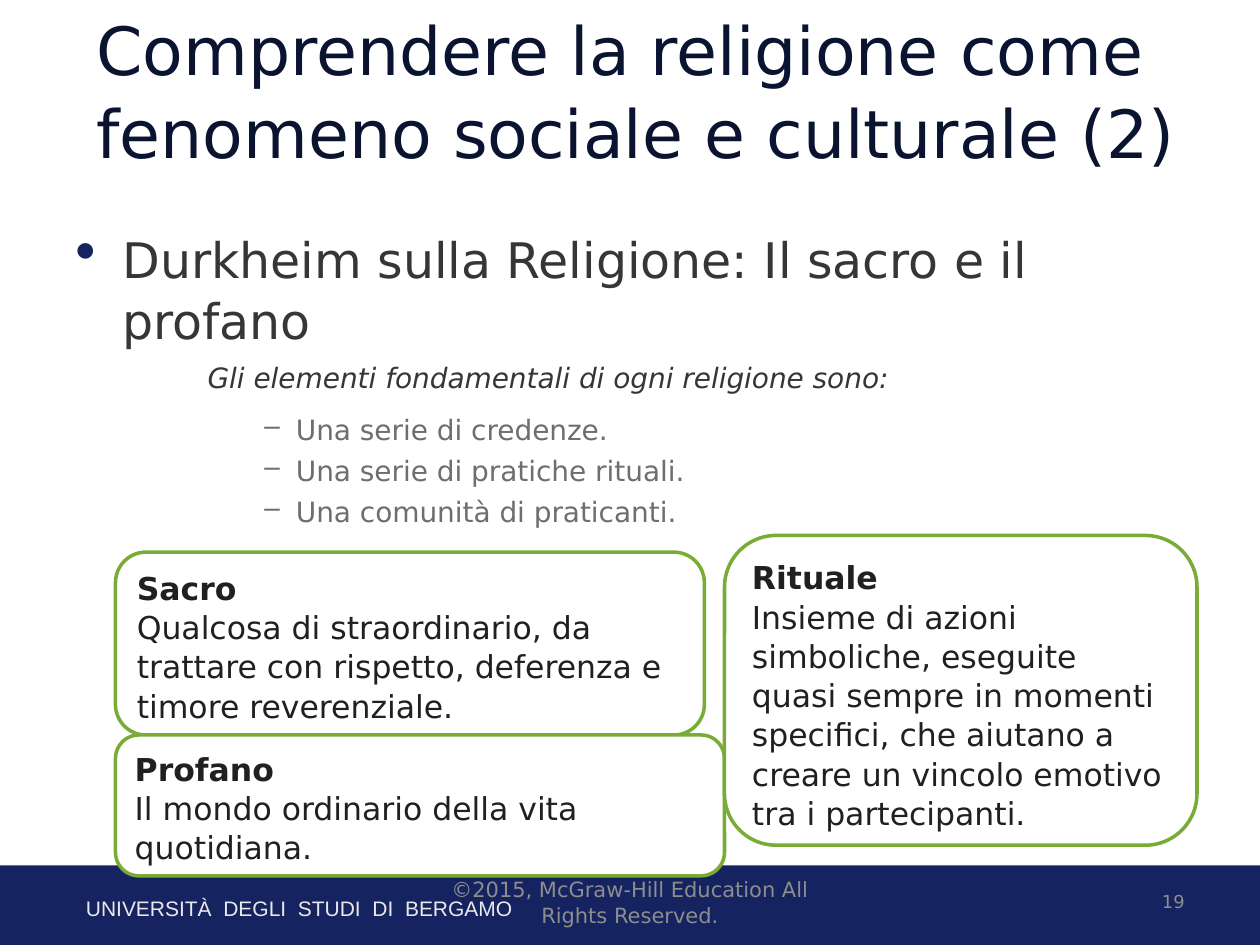
import pptx
import pptx.util
import pptx.dml.color
import pptx.enum.shapes
import pptx.enum.text
import pptx.oxml
import pptx.oxml.ns

Pt = pptx.util.Pt
RGBColor = pptx.dml.color.RGBColor
ALIGN = pptx.enum.text.PP_ALIGN
ANCHOR = pptx.enum.text.MSO_ANCHOR
SHAPE = pptx.enum.shapes.MSO_SHAPE

WHITE = RGBColor(0xFF, 0xFF, 0xFF)
NAVY = RGBColor(0x15, 0x24, 0x60)
TITLE_COLOR = RGBColor(0x0A, 0x14, 0x31)
BODY_COLOR = RGBColor(0x36, 0x36, 0x36)
ITEM_COLOR = RGBColor(0x6E, 0x6E, 0x6E)
BOX_TEXT = RGBColor(0x20, 0x20, 0x20)
GREEN = RGBColor(0x78, 0xAC, 0x35)
FOOTER_COLOR = RGBColor(0x8D, 0x8D, 0x8D)
PALE = RGBColor(0xE9, 0xE9, 0xE9)
FONT = "DejaVu Sans"
LINE_SPACING = 1.04

TITLE = "Comprendere la religione come fenomeno sociale e culturale (2)"
HEADING = "Durkheim sulla Religione: Il sacro e il profano"
INTRODUCTION = "Gli elementi fondamentali di ogni religione sono:"
ELEMENTS = [
    "Una serie di credenze.",
    "Una serie di pratiche rituali.",
    "Una comunità di praticanti.",
]
DEFINITIONS = [
    ("Sacro", "Qualcosa di straordinario, da trattare con rispetto, deferenza e timore reverenziale.",
     (66, 315.5, 336.5, 104.5)),
    ("Profano", "Il mondo ordinario della vita quotidiana.", (66, 420, 348, 80.5)),
    ("Rituale", "Insieme di azioni simboliche, eseguite quasi sempre in momenti specifici, "
     "che aiutano a creare un vincolo emotivo tra i partecipanti.", (414, 306, 270, 177)),
]
UNIVERSITY = "UNIVERSITÀ  DEGLI  STUDI  DI  BERGAMO"
COPYRIGHT = "©2015, McGraw-Hill Education All Rights Reserved."
PAGE_NUMBER = "19"


def write(paragraph, text, size, color, font=FONT, bold=False, italic=False, align=ALIGN.LEFT):
    paragraph.text = text
    paragraph.alignment = align
    paragraph.line_spacing = LINE_SPACING
    for run in paragraph.runs:
        run.font.name = font
        run.font.size = Pt(size)
        run.font.bold = bold
        run.font.italic = italic
        run.font.color.rgb = color


def add_text_box(slide, place, anchor=ANCHOR.TOP):
    frame = slide.shapes.add_textbox(*map(Pt, place)).text_frame
    frame.word_wrap = True
    frame.vertical_anchor = anchor
    return frame


def add_panel(slide, kind, place, fill):
    shape = slide.shapes.add_shape(kind, *map(Pt, place))
    shape.shadow.inherit = False
    shape.fill.solid()
    shape.fill.fore_color.rgb = fill
    return shape


def indent(paragraph, level, margin, hanging=0, bullet=None, color=None, percent=100):
    paragraph.level = level
    properties = paragraph._p.get_or_add_pPr()
    properties.set("marL", str(Pt(margin)))
    properties.set("indent", str(Pt(-hanging)))
    if bullet:
        namespace = pptx.oxml.ns.nsdecls("a")
        parts = [f'<a:buSzPct {namespace} val="{percent * 1000}"/>',
                 f'<a:buChar {namespace} char="{bullet}"/>']
        if color is not None:
            parts.insert(0, f'<a:buClr {namespace}><a:srgbClr val="{color}"/></a:buClr>')
        for part in parts:
            properties.append(pptx.oxml.parse_xml(part))


def add_body(slide):
    frame = add_text_box(slide, (36, 126, 648, 356))
    heading = frame.paragraphs[0]
    indent(heading, 0, 27, 27, "•", NAVY, 122)
    write(heading, HEADING, 28, BODY_COLOR)
    introduction = frame.add_paragraph()
    indent(introduction, 2, 75.6)
    write(introduction, INTRODUCTION, 16, BODY_COLOR, italic=True, align=ALIGN.JUSTIFY)
    introduction.space_before = introduction.space_after = Pt(6)
    for element in ELEMENTS:
        paragraph = frame.add_paragraph()
        indent(paragraph, 3, 126, 18, "–")
        write(paragraph, element, 16, ITEM_COLOR)
        paragraph.space_before = Pt(3.5)


def add_definition(slide, term, meaning, place):
    box = add_panel(slide, SHAPE.ROUNDED_RECTANGLE, place, WHITE)
    box.line.color.rgb = GREEN
    box.line.width = Pt(2)
    frame = box.text_frame
    frame.word_wrap = True
    frame.vertical_anchor = ANCHOR.TOP
    write(frame.paragraphs[0], term, 18, BOX_TEXT, bold=True)
    write(frame.add_paragraph(), meaning, 18, BOX_TEXT)


def main():
    presentation = pptx.Presentation()
    presentation.slide_width, presentation.slide_height = Pt(720), Pt(540)
    slide = presentation.slides.add_slide(presentation.slide_layouts[6])

    band = add_panel(slide, SHAPE.RECTANGLE, (0, 494.6, 720, 45.4), NAVY)
    band.line.fill.background()
    university = add_text_box(slide, (42, 507.6, 419, 21.6))
    write(university.paragraphs[0], UNIVERSITY, 12, PALE, font="Arial")

    add_body(slide)
    page = add_text_box(slide, (516, 500.5, 168, 29), ANCHOR.MIDDLE)
    write(page.paragraphs[0], PAGE_NUMBER, 10.2, FOOTER_COLOR, align=ALIGN.RIGHT)
    for definition in DEFINITIONS:
        add_definition(slide, *definition)
    title = add_text_box(slide, (48, 12, 642, 78), ANCHOR.MIDDLE)
    write(title.paragraphs[0], TITLE, 38, TITLE_COLOR)
    rights = add_text_box(slide, (246, 500.5, 228, 29), ANCHOR.MIDDLE)
    write(rights.paragraphs[0], COPYRIGHT, 12, FOOTER_COLOR, align=ALIGN.CENTER)

    presentation.save("out.pptx")


if __name__ == "__main__":
    main()
